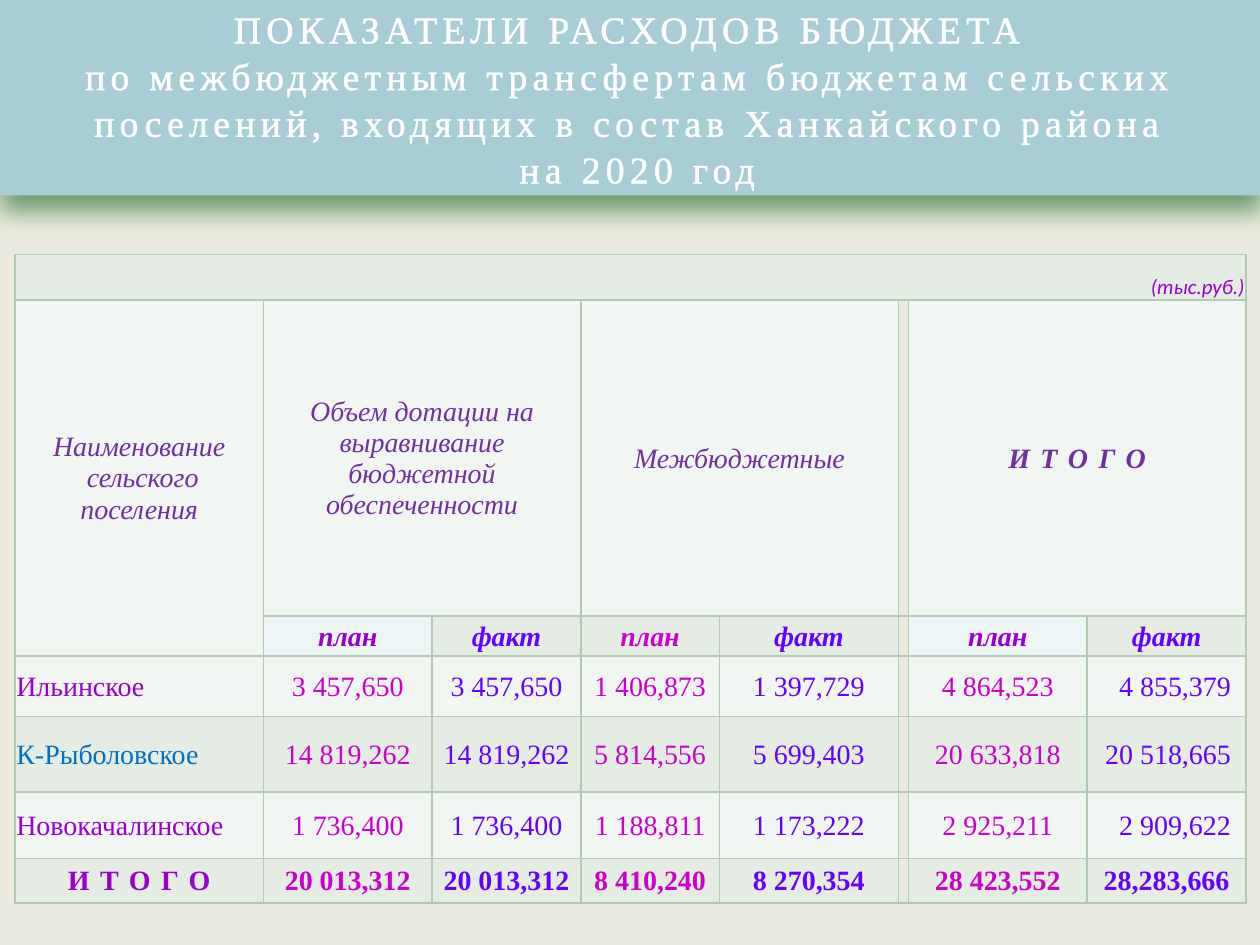
import pptx
import pptx.dml.color
import pptx.enum.text
import pptx.oxml
import pptx.oxml.ns
import pptx.util
from lxml import etree

RGBColor = pptx.dml.color.RGBColor
Inches, Pt = pptx.util.Inches, pptx.util.Pt
ALIGN = pptx.enum.text.PP_ALIGN
ANCHOR = pptx.enum.text.MSO_ANCHOR
qn = pptx.oxml.ns.qn

SAND = RGBColor(0xEA, 0xEB, 0xDE)
SKY = RGBColor(0xA8, 0xCD, 0xD7)
WHITE = RGBColor(0xFF, 0xFF, 0xFF)
GREEN = RGBColor(0xE4, 0xEC, 0xE4)
PALE = RGBColor(0xF2, 0xF6, 0xF2)
ICE = RGBColor(0xEE, 0xF5, 0xF7)
BORDER = RGBColor(0xB0, 0xCC, 0xB0)
SHADE = RGBColor(0x5C, 0x90, 0x5C)
PURPLE = RGBColor(0x70, 0x30, 0xA0)
VIOLET = RGBColor(0x99, 0x00, 0xCC)
MAGENTA = RGBColor(0xCC, 0x00, 0xCC)
INDIGO = RGBColor(0x66, 0x00, 0xFF)
BLUE = RGBColor(0x00, 0x70, 0xC0)

TITLE = ("ПОКАЗАТЕЛИ РАСХОДОВ БЮДЖЕТА",
         "по межбюджетным трансфертам бюджетам сельских поселений, "
         "входящих в состав Ханкайского района",
         " на 2020 год")
COLUMNS = (1.97, 1.34, 1.18, 1.1, 1.42, 0.08, 1.42, 1.26)
ROWS = (0.36, 2.51, 0.3, 0.48, 0.6, 0.53, 0.35)
GAP = 5                             # narrow empty column before the totals
VALUE_COLUMNS = (1, 2, 3, 4, 6, 7)  # plan and fact in turn
GROUPS = ((1, "Объем дотации на выравнивание бюджетной обеспеченности"),
          (3, "Межбюджетные"), (6, "ИТОГО"))
SETTLEMENTS = (
    ("Ильинское", VIOLET, ("3 457,650", "3 457,650", "1 406,873",
                           "1 397,729", "4 864,523", "4 855,379")),
    ("К-Рыболовское", BLUE, ("14 819,262", "14 819,262", "5 814,556",
                             "5 699,403", "20 633,818", "20 518,665")),
    ("Новокачалинское", VIOLET, ("1 736,400", "1 736,400", "1 188,811",
                                 "1 173,222", "2 925,211", "2 909,622")),
    ("ИТОГО", VIOLET, ("20 013,312", "20 013,312", "8 410,240",
                       "8 270,354", "28 423,552", "28,283,666")),
)


def solid_line(parent, tag, color, width):
    line = etree.SubElement(parent, qn(tag), w=str(int(Pt(width))))
    fill = etree.SubElement(line, qn("a:solidFill"))
    etree.SubElement(fill, qn("a:srgbClr"), val=str(color))
    return line


def write(frame, lines, color, size=16, font="Times New Roman", align=ALIGN.CENTER,
          bold=False, italic=False, spacing=0, outline=None, breaks=False):
    """Write lines as paragraphs, or as one paragraph with line breaks."""
    para = frame.paragraphs[0]
    for index, line in enumerate(lines):
        if index and breaks:
            para.add_line_break()
        elif index:
            para = frame.add_paragraph()
        para.alignment = align
        span = para.add_run()
        span.text = line
        span.font.name, span.font.size = font, Pt(size)
        span.font.bold, span.font.italic = bold, italic
        span.font.color.rgb = color
        properties = span.font._element
        if spacing:
            properties.set("spc", str(spacing * 100))
        if outline:
            properties.insert(0, solid_line(properties, "a:ln", color, outline))


def add_title(deck, page):
    box = page.shapes.title
    box.left = box.top = 0
    box.width, box.height = deck.slide_width, Inches(1.55)
    box.fill.solid()
    box.fill.fore_color.rgb = SKY
    # Soft shadow under the band
    effects = etree.SubElement(box._element.spPr, qn("a:effectLst"))
    shadow = etree.SubElement(effects, qn("a:outerShdw"), blurRad=str(int(Pt(14))),
                              dist=str(int(Pt(9))), dir="5400000", rotWithShape="0")
    tint = etree.SubElement(shadow, qn("a:srgbClr"), val=str(SHADE))
    etree.SubElement(tint, qn("a:alpha"), val="85000")
    frame = box.text_frame
    frame.word_wrap = True
    frame.auto_size = pptx.enum.text.MSO_AUTO_SIZE.NONE
    frame.vertical_anchor = ANCHOR.MIDDLE
    write(frame, TITLE, WHITE, size=21.6, spacing=3, outline=1.45, breaks=True)
    frame.paragraphs[0].line_spacing = 1.03


def style_cell(cell, fill):
    cell.margin_left = cell.margin_right = cell.margin_top = Inches(0.01)
    cell.margin_bottom = 0
    cell.vertical_anchor = ANCHOR.MIDDLE
    properties = cell._tc.get_or_add_tcPr()
    for side in ("a:lnL", "a:lnR", "a:lnT", "a:lnB"):
        solid_line(properties, side, BORDER, 1)
    cell.fill.solid()
    cell.fill.fore_color.rgb = fill


def cell_fill(row, column):
    if row == 0:
        return GREEN
    if column == GAP:
        return SAND
    if row == 2 and column in (1, 6):
        return ICE
    if row == 2 and column == 0:
        return PALE
    return PALE if row % 2 else GREEN


def add_grid(page):
    frame = page.shapes.add_table(len(ROWS), len(COLUMNS), Inches(0.12), Inches(2.02),
                                  Inches(sum(COLUMNS)), Inches(sum(ROWS)))
    table = frame.table
    table.first_row = table.horz_banding = False
    for column, width in zip(table.columns, COLUMNS):
        column.width = Inches(width)
    for row, height in zip(table.rows, ROWS):
        row.height = Inches(height)
    for row in range(len(ROWS)):
        for column in range(len(COLUMNS)):
            style_cell(table.cell(row, column), cell_fill(row, column))
    return table


def fill_header(table):
    # Unit of measure
    unit = table.cell(0, 0)
    unit.merge(table.cell(0, len(COLUMNS) - 1))
    unit.vertical_anchor = ANCHOR.BOTTOM
    write(unit.text_frame, ["(тыс.руб.)"], VIOLET, size=12, font="Calibri",
          align=ALIGN.RIGHT, italic=True)
    # Column groups
    name = table.cell(1, 0)
    name.merge(table.cell(2, 0))
    write(name.text_frame, ["Наименование", " сельского", "поселения"], PURPLE, italic=True)
    for column, text in GROUPS:
        total = text == "ИТОГО"
        group = table.cell(1, column)
        group.merge(table.cell(1, column + 1))
        write(group.text_frame, [text], PURPLE, italic=True, bold=total,
              spacing=6 if total else 0)
    # Plan and fact
    for index, column in enumerate(VALUE_COLUMNS):
        plan = MAGENTA if column == 3 else VIOLET
        text, color = ("факт", INDIGO) if index % 2 else ("план", plan)
        write(table.cell(2, column).text_frame, [text], color, bold=True, italic=True)


def fill_body(table):
    for row, (name, color, values) in enumerate(SETTLEMENTS, start=3):
        total = name == "ИТОГО"
        write(table.cell(row, 0).text_frame, [name], color, bold=total,
              align=ALIGN.CENTER if total else ALIGN.LEFT, spacing=6 if total else 0)
        for index, (column, value) in enumerate(zip(VALUE_COLUMNS, values)):
            cell = table.cell(row, column)
            to_right = column == VALUE_COLUMNS[-1] and not total
            if to_right:
                cell.margin_right = Inches(0.12)
            write(cell.text_frame, [value], INDIGO if index % 2 else MAGENTA,
                  bold=total, align=ALIGN.RIGHT if to_right else ALIGN.CENTER)


def main():
    deck = pptx.Presentation()
    deck.slide_width, deck.slide_height = Inches(10), Inches(7.5)
    page = deck.slides.add_slide(deck.slide_layouts[5])
    page.background.fill.solid()
    page.background.fill.fore_color.rgb = SAND
    add_title(deck, page)
    table = add_grid(page)
    fill_header(table)
    fill_body(table)
    deck.save("out.pptx")


if __name__ == "__main__":
    main()
